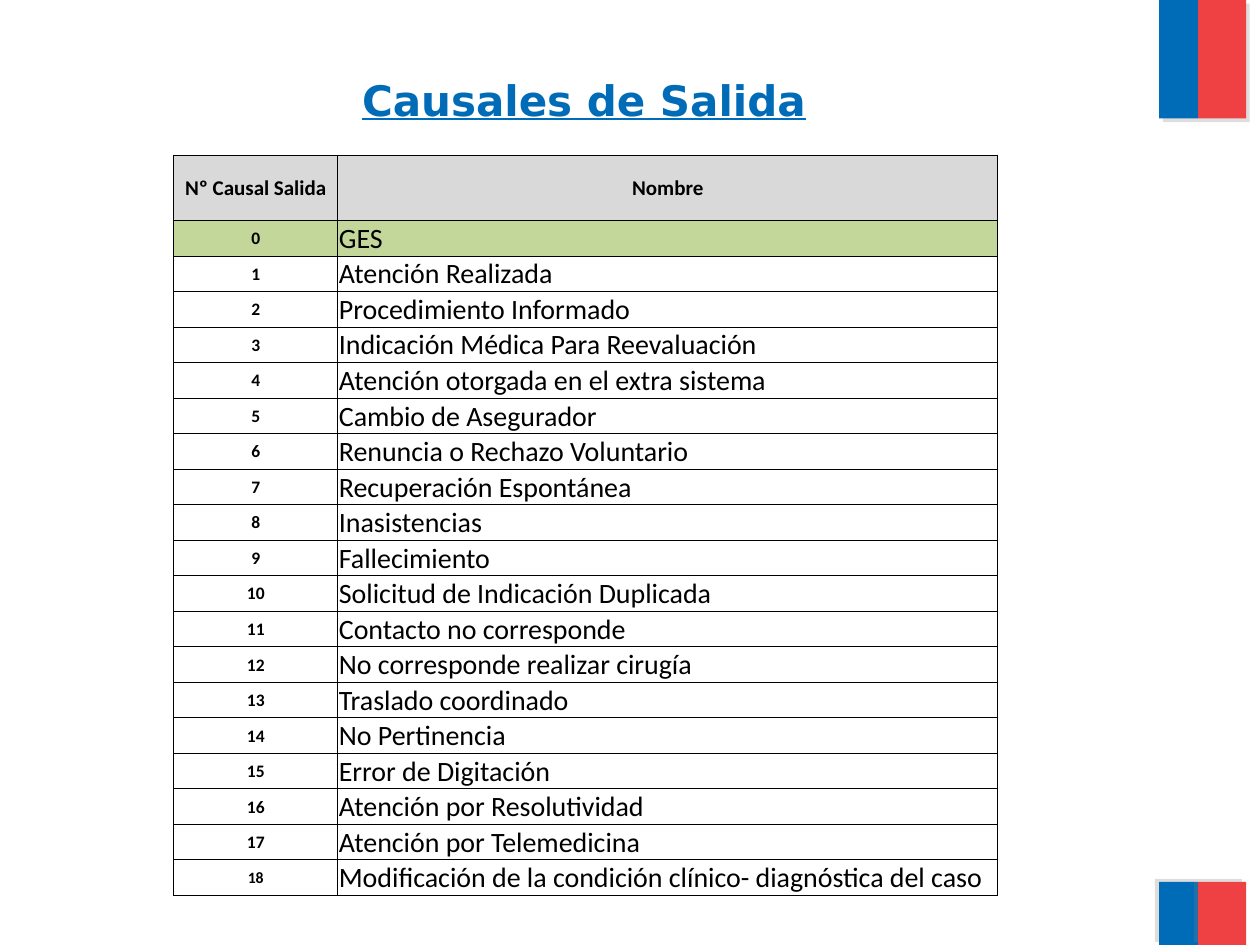
from dataclasses import dataclass

from lxml import etree
from pptx import Presentation, util as u
from pptx.dml.color import RGBColor
from pptx.enum import shapes, text
from pptx.oxml import ns


@dataclass(frozen=True)
class Theme:
    blue: str = "006CB7"
    red: str = "EF4144"
    shadow: str = "808080"
    ink: str = "000000"
    header: str = "D9D9D9"
    highlight: str = "C4D79B"
    paper: str = "FFFFFF"
    title_font: str = "DejaVu Sans"
    body_font: str = "Calibri"
    title_size: float = 24
    header_size: float = 12
    number_size: float = 10
    last_number_size: float = 9
    name_size: float = 16


HEADINGS = ["Nº Causal Salida", "Nombre"]
CAUSES = [
    "GES",
    "Atención Realizada",
    "Procedimiento Informado",
    "Indicación Médica Para Reevaluación",
    "Atención otorgada en el extra sistema",
    "Cambio de Asegurador",
    "Renuncia o Rechazo Voluntario",
    "Recuperación Espontánea",
    "Inasistencias",
    "Fallecimiento",
    "Solicitud de Indicación Duplicada",
    "Contacto no corresponde",
    "No corresponde realizar cirugía",
    "Traslado coordinado",
    "No Pertinencia",
    "Error de Digitación",
    "Atención por Resolutividad",
    "Atención por Telemedicina",
    "Modificación de la condición clínico- diagnóstica del caso",
]


def add_color(parent, color):
    return etree.SubElement(parent, ns.qn("a:srgbClr"), val=color)


class SlideBuilder:
    def __init__(self, page, theme):
        self.page = page
        self.theme = theme

    def style(self, paragraph, font, size, color, bold, align):
        paragraph.alignment = align
        paragraph.font.name = font
        paragraph.font.size = u.Pt(size)
        paragraph.font.bold = bold
        paragraph.font.color.rgb = RGBColor.from_string(color)

    def title(self, words, left, top, width, height):
        box = self.page.shapes.title
        box.left, box.top = u.Inches(left), u.Inches(top)
        box.width, box.height = u.Inches(width), u.Inches(height)
        frame = box.text_frame
        frame.text = words
        frame.vertical_anchor = text.MSO_ANCHOR.MIDDLE
        paragraph = frame.paragraphs[0]
        self.style(paragraph, self.theme.title_font, self.theme.title_size,
                   self.theme.blue, True, text.PP_ALIGN.CENTER)
        paragraph.font.underline = True

    def bar(self, color, left, top, width, height, shadow_angle):
        box = self.page.shapes.add_shape(
            shapes.MSO_SHAPE.RECTANGLE, u.Inches(left), u.Inches(top),
            u.Inches(width), u.Inches(height))
        box.fill.solid()
        box.fill.fore_color.rgb = RGBColor.from_string(color)
        box.line.fill.background()
        # Soft offset shadow inside the effect list
        box.shadow.inherit = False
        effects = box._element.spPr.find(ns.qn("a:effectLst"))
        shadow = etree.SubElement(
            effects, ns.qn("a:outerShdw"), blurRad="0", dist=str(u.Pt(3)),
            dir=str(shadow_angle * 60000), algn="ctr", rotWithShape="0")
        tint = add_color(shadow, self.theme.shadow)
        etree.SubElement(tint, ns.qn("a:alpha"), val="25000")

    def cell(self, cell, words, size, fill, bold, align):
        cell.text = words
        cell.vertical_anchor = text.MSO_ANCHOR.MIDDLE
        cell.margin_left = cell.margin_right = cell.margin_top = u.Inches(0.01)
        cell.margin_bottom = 0
        self.style(cell.text_frame.paragraphs[0], self.theme.body_font, size,
                   self.theme.ink, bold, align)
        # Borders must come before the fill
        properties = cell._tc.get_or_add_tcPr()
        for side in ("lnL", "lnR", "lnT", "lnB"):
            line = etree.SubElement(properties, ns.qn("a:" + side), w=str(u.Pt(0.5)))
            add_color(etree.SubElement(line, ns.qn("a:solidFill")), self.theme.ink)
        cell.fill.solid()
        cell.fill.fore_color.rgb = RGBColor.from_string(fill)

    def table(self, headings, names, left, top, widths, header_height, row_height):
        theme = self.theme
        center, start = text.PP_ALIGN.CENTER, text.PP_ALIGN.LEFT
        heights = [header_height] + [row_height] * len(names)
        table = self.page.shapes.add_table(
            len(heights), len(widths), u.Inches(left), u.Inches(top),
            u.Inches(sum(widths)), u.Inches(sum(heights))).table
        table.first_row = table.horz_banding = False
        for column, width in zip(table.columns, widths):
            column.width = u.Inches(width)
        for row, height in zip(table.rows, heights):
            row.height = u.Inches(height)

        for column, words in enumerate(headings):
            self.cell(table.cell(0, column), words, theme.header_size,
                      theme.header, True, center)
        for number, name in enumerate(names):
            fill = theme.highlight if number == 0 else theme.paper
            last = number == len(names) - 1
            size = theme.last_number_size if last else theme.number_size
            self.cell(table.cell(number + 1, 0), str(number), size, fill, True, center)
            self.cell(table.cell(number + 1, 1), name, theme.name_size, fill, False, start)


def main():
    deck = Presentation()
    deck.slide_width, deck.slide_height = u.Inches(10), u.Inches(7.5)
    theme = Theme()
    builder = SlideBuilder(deck.slides.add_slide(deck.slide_layouts[5]), theme)

    # Two-colour bands at the top and bottom right
    for top, height, shadow_angle in ((0, 0.94, 45), (7, 0.5, 215)):
        for color, left, width in ((theme.blue, 9.2, 0.31), (theme.red, 9.51, 0.38)):
            builder.bar(color, left, top, width, height, shadow_angle)

    # Heading and table of exit causes
    builder.title("Causales de Salida", 0.17, 0.17, 8.93, 1.25)
    builder.table(HEADINGS, CAUSES, 1.38, 1.23, [1.3, 5.24], 0.52, 0.28)

    deck.save("out.pptx")


if __name__ == "__main__":
    main()
